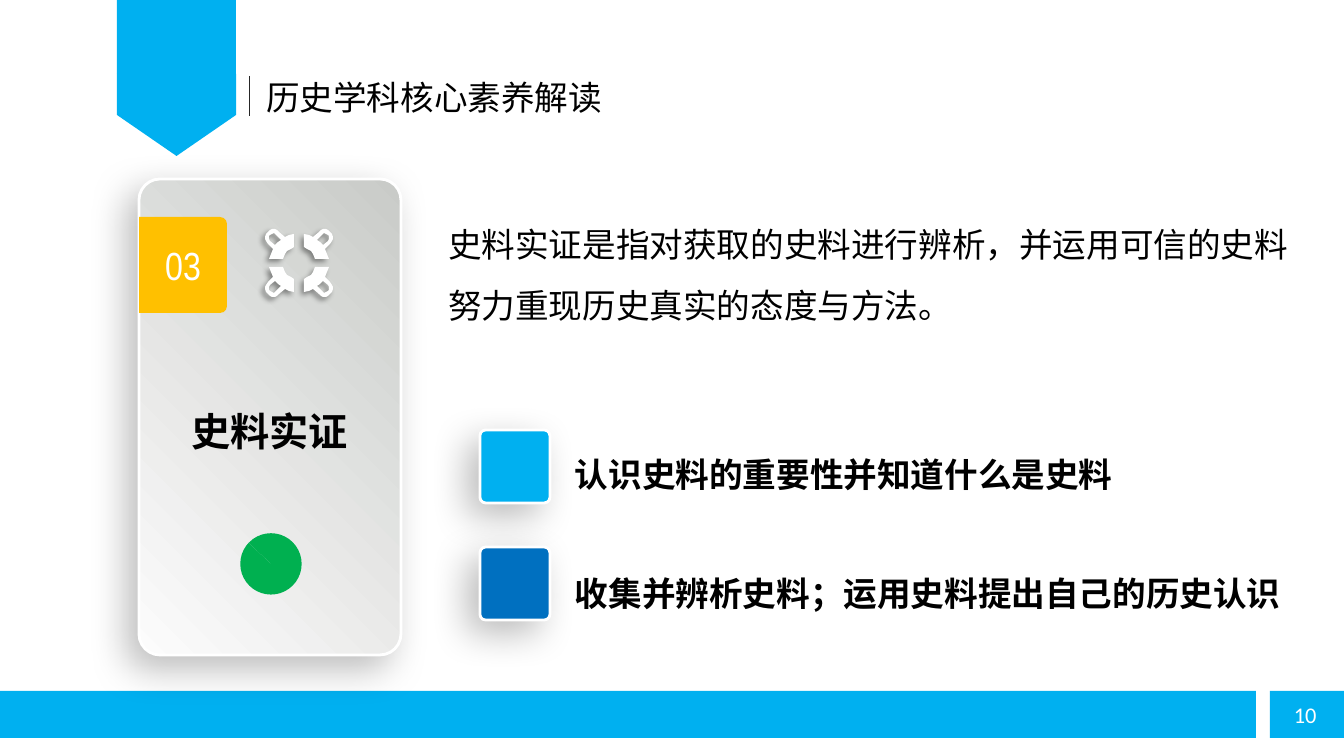
"""Build the slide on evidence from historical sources."""
from lxml import etree
from pptx import Presentation
from pptx import util as u
from pptx.chart import data as chart_data
from pptx.dml.color import RGBColor
from pptx.enum import chart as charts, shapes, text
from pptx.oxml import ns

PX = 9144000 / 1008
SANS = "Noto Sans CJK SC"
BLUE, DEEP, GREEN, AMBER = "00B0F0", "0070C0", "00B050", "FFC000"
WHITE, BLACK = "FFFFFF", "000000"
KIND = shapes.MSO_SHAPE

TITLE = "历史学科核心素养解读"
DEFINITION = "史料实证是指对获取的史料进行辨析，并运用可信的史料努力重现历史真实的态度与方法。"
POINTS = [
    (430, 429, BLUE, "认识史料的重要性并知道什么是史料"),
    (547, 548, DEEP, "收集并辨析史料；运用史料提出自己的历史认识"),
]
LABELS = [
    ("03", (150, 236, 66, 57), dict(size=28, font="Arial Narrow", color=WHITE, align="CENTER")),
    ("史料实证", (141, 402, 257, 57), dict(size=28, bold=True, align="CENTER")),
    ("10", (1284, 696, 46, 37), dict(size=16, font="Calibri", color=WHITE)),
]
BANDS = [(117, 0, 119, 74), (0, 691, 1256, 47), (1270, 691, 74, 47)]
SHARE = [("1", 87), ("2", 13)]
ICON_CENTRE = (299, 263)
ICON_ARM = [
    [(16, 4), (30, 4), (28, 9), (26, 14), (31, 19), (33, 22), (34, 24), (34, 26),
     (33, 29), (31, 31), (29, 33), (27, 34), (24, 34), (22, 33), (20, 31), (14, 26),
     (10, 28), (5, 29), (5, 16), (8, 14), (12, 12), (14, 9)],
    [(24, 18), (21, 21), (18, 23), (23, 28), (24, 29), (25, 30), (27, 29), (29, 28),
     (30, 27), (30, 25), (30, 24), (29, 22)],
]


def emu(*lengths):
    return [u.Emu(round(length * PX)) for length in lengths]


def rgb(color):
    return RGBColor.from_string(color)


def place(shape, area):
    shape.left, shape.top, shape.width, shape.height = emu(*area)


def write(box, words, size=24, font=SANS, color=BLACK, bold=False, align="LEFT", spacing=1.0):
    frame = box.text_frame
    frame.word_wrap = True
    frame.auto_size = text.MSO_AUTO_SIZE.NONE
    frame.vertical_anchor = text.MSO_ANCHOR.TOP
    para = frame.paragraphs[0]
    para.alignment = getattr(text.PP_ALIGN, align)
    para.line_spacing = spacing
    para.space_before = u.Pt(0)
    span = para.add_run()
    span.text = words
    span.font.size = u.Pt(size)
    span.font.name = font
    span.font.bold = bold
    span.font.color.rgb = rgb(color)
    latin = span.font._element.find(ns.qn("a:latin"))
    latin.addnext(latin.makeelement(ns.qn("a:ea"), {"typeface": font}))
    return para


def label(page, words, area, **style):
    return write(page.shapes.add_textbox(*emu(*area)), words, **style)


def paint(shape, color, border=None):
    shape.shadow.inherit = False
    shape.fill.solid()
    shape.fill.fore_color.rgb = rgb(color)
    if border:
        shape.line.color.rgb = rgb(border)
        shape.line.width = u.Pt(2)
    else:
        shape.line.fill.background()
    return shape


def block(page, kind, area, color, border=None):
    return paint(page.shapes.add_shape(kind, *emu(*area)), color, border)


def turned(page, kind, area, color):
    """Add a shape turned a quarter clockwise whose visible outline fills the area."""
    left, top, width, height = area
    shift = (width - height) / 2
    shape = block(page, kind, (left + shift, top - shift, height, width), color)
    shape.rotation = 90
    return shape


def cast_shadow(shape, alpha, blur, distance):
    effects = shape._element.spPr.find(ns.qn("a:effectLst"))
    outer = etree.SubElement(effects, ns.qn("a:outerShdw"), blurRad=str(u.Pt(blur)),
                             dist=str(u.Pt(distance)), dir="8100000", algn="tr", rotWithShape="0")
    tint = etree.SubElement(outer, ns.qn("a:srgbClr"), val=BLACK)
    etree.SubElement(tint, ns.qn("a:alpha"), val=str(alpha * 1000))


def card(page, area, color):
    shape = block(page, KIND.ROUNDED_RECTANGLE, area, color, WHITE)
    shape.adjustments[0] = 0.08
    cast_shadow(shape, 26, 27, 12)
    return shape


def draw_icon(page):
    x, y = ICON_CENTRE
    outlines = [[(x + across * dx, y + down * dy) for dx, dy in outline]
                for across in (1, -1) for down in (1, -1) for outline in ICON_ARM]
    builder = page.shapes.build_freeform(*outlines[0][0], scale=PX)
    for number, outline in enumerate(outlines):
        if number:
            builder.move_to(*outline[0])
        builder.add_line_segments(outline[1:], close=True)
    cast_shadow(paint(builder.convert_to_shape(), WHITE), 40, 4, 3)


def draw_pie(page):
    values = chart_data.CategoryChartData()
    values.categories = [name for name, _ in SHARE]
    values.add_series("Series 1", [value for _, value in SHARE])
    chart = page.shapes.add_chart(charts.XL_CHART_TYPE.PIE, *emu(204, 519, 134, 89), values).chart
    chart.has_legend = chart.has_title = False
    chart.font.name, chart.font.size = "Calibri", u.Pt(18)
    chart.font.color.rgb = rgb(BLACK)
    plot = chart.plots[0]
    plot.vary_by_categories = False
    for number in range(len(SHARE)):
        look = plot.series[0].points[number].format
        look.fill.solid()
        look.fill.fore_color.rgb = rgb(GREEN)
        look.line.fill.background()
    area = chart._chartSpace.chart.plotArea
    for old in area.findall(ns.qn("c:layout")):
        area.remove(old)
    layout = etree.Element(ns.qn("c:layout"))
    area.insert(0, layout)
    manual = etree.SubElement(layout, ns.qn("c:manualLayout"))
    for tag, value in [("layoutTarget", "inner"), ("xMode", "edge"), ("yMode", "edge"),
                       ("x", "0.27"), ("y", "0.16"), ("w", "0.46"), ("h", "0.69")]:
        etree.SubElement(manual, ns.qn("c:" + tag), val=value)


def draw_header(page):
    for area in BANDS:
        block(page, KIND.RECTANGLE, area, BLUE)
    turned(page, KIND.PENTAGON, (117, 74, 119, 82), BLUE)
    rule = page.shapes.add_connector(shapes.MSO_CONNECTOR.STRAIGHT, *emu(250, 76, 250, 116))
    rule.line.color.rgb = rgb("262626")
    rule.line.width = u.Pt(0.75)
    etree.SubElement(rule._element.spPr, ns.qn("a:effectLst"))


def draw_panel(page):
    panel = card(page, (139, 179, 262, 476), WHITE)
    panel.fill.gradient()
    panel.fill.gradient_angle = 225
    for stop, color, position in zip(panel.fill.gradient_stops, ("C9CBC8", "FCFCFC"), (0, 1)):
        stop.color.rgb = rgb(color)
        stop.position = position
    tab = turned(page, KIND.ROUND_2_SAME_RECTANGLE, (139, 217, 88, 96), AMBER)
    tab.adjustments[0] = 0.08
    draw_icon(page)
    draw_pie(page)


def main():
    deck = Presentation()
    deck.slide_width, deck.slide_height = emu(1344, 756)
    page = deck.slides.add_slide(deck.slide_layouts[1])
    title, body = page.placeholders
    place(title, (256, 72, 379, 50))
    write(title, TITLE)
    place(body, (438, 199, 861, 126))
    props = write(body, DEFINITION, spacing=1.5)._p.get_or_add_pPr()
    props.set("marL", "0")
    props.set("indent", "0")
    etree.SubElement(props, ns.qn("a:buNone"))
    draw_header(page)
    draw_panel(page)
    for words, area, style in LABELS:
        label(page, words, area, **style)
    for square_top, text_top, color, words in POINTS:
        card(page, (480, square_top, 70, 73), color)
        label(page, words, (565, text_top, 745, 68), bold=True, spacing=1.5)
    deck.save("out.pptx")


if __name__ == "__main__":
    main()
